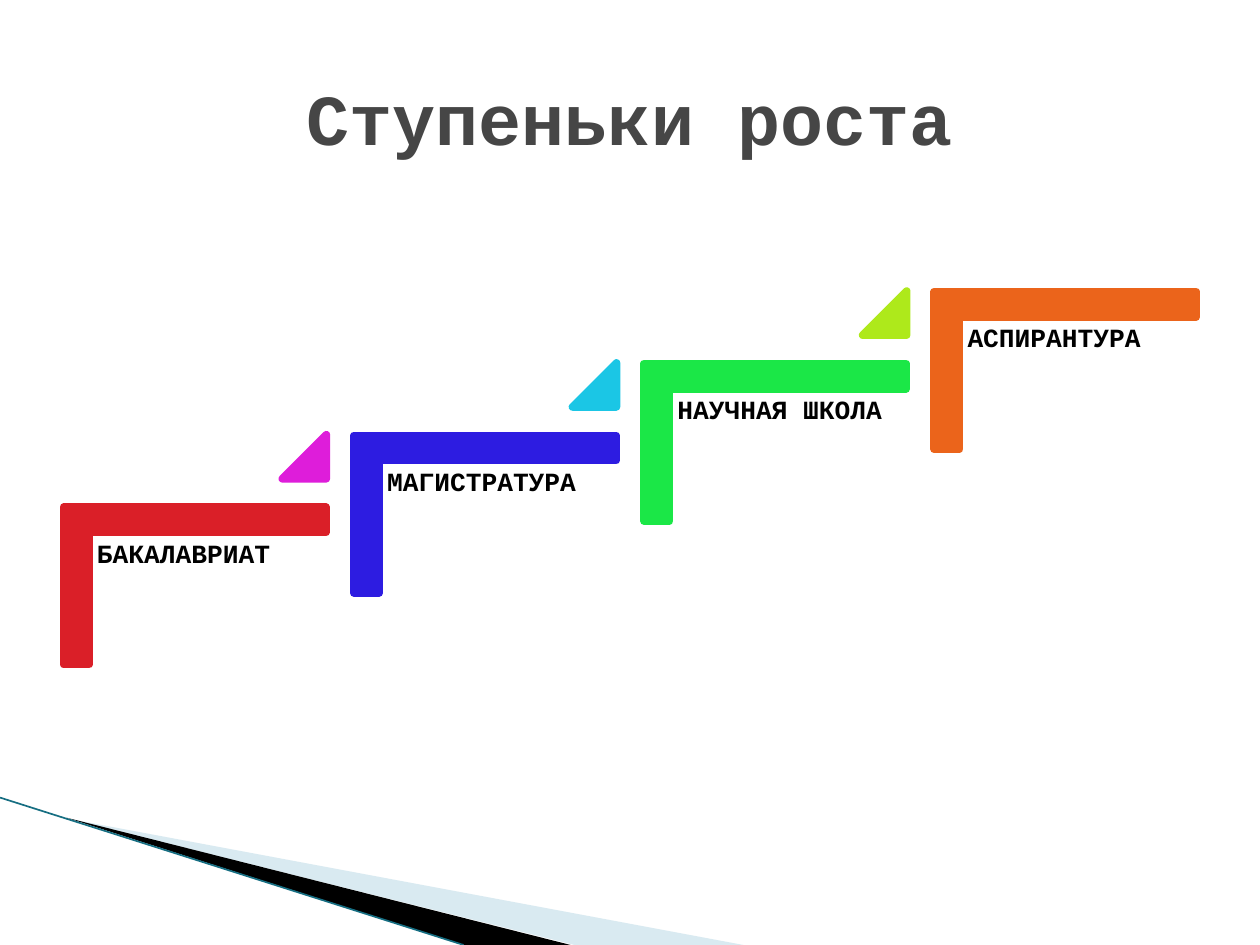
from lxml.etree import SubElement
from pptx import Presentation
from pptx.dml.color import RGBColor
from pptx.enum.shapes import MSO_CONNECTOR, MSO_SHAPE
from pptx.enum.text import MSO_ANCHOR, PP_ALIGN
from pptx.oxml.ns import qn
from pptx.util import Inches, Pt

WIDTH, HEIGHT = 10, 7.5
COLUMN, RISE = 2.303, 0.57
FIRST_LEFT, FIRST_TOP = 0.5, 4.02
FONT = "Courier New"

BLACK = RGBColor(0x00, 0x00, 0x00)
GRAY = RGBColor(0x46, 0x46, 0x46)
PALE_BLUE = RGBColor(0xA0, 0xCB, 0xDC)
TEAL = RGBColor(0x16, 0x6E, 0x82)
RED = RGBColor(0xDA, 0x1F, 0x28)
MAGENTA = RGBColor(0xDE, 0x1D, 0xDA)
BLUE = RGBColor(0x2D, 0x1C, 0xE1)
CYAN = RGBColor(0x1B, 0xC6, 0xE5)
GREEN = RGBColor(0x1B, 0xE7, 0x47)
LIME = RGBColor(0xAE, 0xE9, 0x1B)
ORANGE = RGBColor(0xEB, 0x64, 0x1B)

STEPS = [
    ("БАКАЛАВРИАТ", RED, MAGENTA),
    ("МАГИСТРАТУРА", BLUE, CYAN),
    ("НАУЧНАЯ ШКОЛА", GREEN, LIME),
    ("АСПИРАНТУРА", ORANGE, None),
]


def add_text(page, text, left, top, width, height, *, size, color,
             align=PP_ALIGN.LEFT, anchor=MSO_ANCHOR.TOP, inset=0.06,
             line_spacing=1.0, space_after=0):
    box = page.shapes.add_textbox(Inches(left), Inches(top), Inches(width), Inches(height))
    frame = box.text_frame
    frame.word_wrap = True
    frame.vertical_anchor = anchor
    frame.margin_left = frame.margin_right = Inches(inset)
    frame.margin_top = frame.margin_bottom = Inches(inset)
    para = frame.paragraphs[0]
    para.alignment = align
    para.line_spacing = line_spacing
    para.space_after = Pt(space_after)
    span = para.add_run()
    span.text = text
    span.font.name = FONT
    span.font.size = Pt(size)
    span.font.bold = True
    span.font.color.rgb = color


def add_preset(page, kind, left, top, width, height, color, adjustments, rotation=0):
    shape = page.shapes.add_shape(kind, Inches(left), Inches(top), Inches(width), Inches(height))
    shape.shadow.inherit = False
    shape.rotation = rotation
    for index, value in enumerate(adjustments):
        shape.adjustments[index] = value
    shape.fill.solid()
    shape.fill.fore_color.rgb = color
    shape.line.color.rgb = color
    shape.line.width = Pt(4.33)


def add_wedge(page, points, color, opacity=100):
    corners = [(Inches(x), Inches(y)) for x, y in points]
    builder = page.shapes.build_freeform(*corners[0])
    builder.add_line_segments(corners[1:], close=True)
    wedge = builder.convert_to_shape()
    wedge.shadow.inherit = False
    wedge.fill.solid()
    wedge.fill.fore_color.rgb = color
    wedge.line.fill.background()
    if opacity < 100:
        tint = next(wedge.element.spPr.iter(qn("a:srgbClr")))
        SubElement(tint, qn("a:alpha"), val=str(opacity * 1000))


def add_edge(page, start, end, color):
    edge = page.shapes.add_connector(
        MSO_CONNECTOR.STRAIGHT, *(Inches(value) for value in (*start, *end)))
    edge.line.color.rgb = color
    edge.line.width = Pt(0.95)
    SubElement(edge.element.spPr, qn("a:effectLst"))


def add_step(page, index, label, color, marker_color):
    left = FIRST_LEFT + index * COLUMN
    top = FIRST_TOP - index * RISE
    add_preset(page, MSO_SHAPE.CORNER, left + 0.42, top - 0.41, 1.25, 2.08,
               color, (0.161, 0.161), rotation=90)
    add_text(page, label, left + 0.21, top + 0.21, 1.88, 1.65,
             size=15, color=BLACK, line_spacing=0.9, space_after=5)
    if marker_color is not None:
        add_preset(page, MSO_SHAPE.ISOSCELES_TRIANGLE, left + 1.74, top - 0.57,
                   0.35, 0.35, marker_color, (1,))


def main():
    deck = Presentation()
    deck.slide_width, deck.slide_height = Inches(WIDTH), Inches(HEIGHT)
    page = deck.slides.add_slide(deck.slide_layouts[6])

    add_wedge(page, [(0.55, 6.5), (5.9, HEIGHT), (4.56, HEIGHT)], PALE_BLUE, opacity=40)
    add_wedge(page, [(0.53, 6.49), (4.53, HEIGHT), (3.68, HEIGHT)], BLACK)
    add_edge(page, (0, 6.33), (3.68, HEIGHT), TEAL)

    for index, step in enumerate(STEPS):
        add_step(page, index, *step)

    add_text(page, "Ступеньки роста", 0.05 * WIDTH, 0.04 * HEIGHT, 0.9 * WIDTH, HEIGHT / 6,
             size=41, color=GRAY, align=PP_ALIGN.CENTER, anchor=MSO_ANCHOR.MIDDLE, inset=0.05)
    deck.save("out.pptx")


if __name__ == "__main__":
    main()
